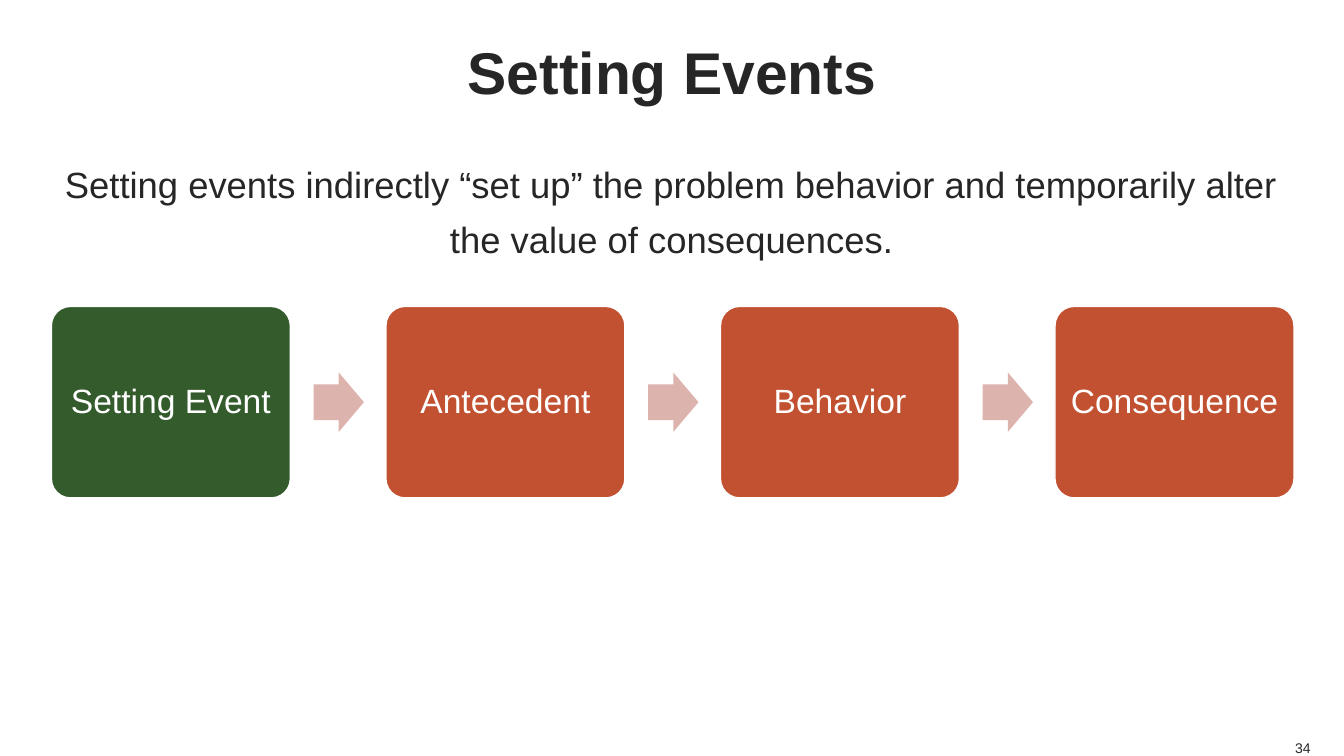
from dataclasses import dataclass

from pptx import Presentation
from pptx.dml.color import RGBColor
from pptx.enum.shapes import MSO_SHAPE
from pptx.enum.text import MSO_ANCHOR, PP_ALIGN
from pptx.util import Inches, Pt

ROUNDED = MSO_SHAPE.ROUNDED_RECTANGLE
ARROW = MSO_SHAPE.RIGHT_ARROW
TOP, MIDDLE, BOTTOM = MSO_ANCHOR.TOP, MSO_ANCHOR.MIDDLE, MSO_ANCHOR.BOTTOM
CENTER, RIGHT = PP_ALIGN.CENTER, PP_ALIGN.RIGHT

FONT = "Arial"
INK, WHITE = "262626", "FFFFFF"
GREEN, RUST, ROSE = "335B2B", "C25131", "DDB3AE"

# Page and step grid, in inches
PAGE_WIDTH, PAGE_HEIGHT = 13.33, 7.5
MARGIN = 0.5
CONTENT_WIDTH = PAGE_WIDTH - 2 * MARGIN
STEP_LEFT, STEP_TOP = 0.51, 3.04
STEP_WIDTH, STEP_HEIGHT = 2.37, 1.9
COLUMN = STEP_WIDTH * 1.4
ARROW_OFFSET = 2.6
ARROW_WIDTH, ARROW_HEIGHT = 0.5, 0.59


@dataclass(frozen=True)
class Area:
    left: float
    top: float
    width: float
    height: float

    def lengths(self) -> list:
        return [Inches(n) for n in (self.left, self.top, self.width, self.height)]


@dataclass(frozen=True)
class Step:
    label: str
    fill: str


STEPS = [
    Step("Setting Event", GREEN),
    Step("Antecedent", RUST),
    Step("Behavior", RUST),
    Step("Consequence", RUST),
]


def color(value: str) -> RGBColor:
    return RGBColor.from_string(value)


def write(box, text: str, *, size: float, ink: str = INK, bold: bool = False,
          align=CENTER, anchor=MIDDLE, spacing: float = 1.0,
          inset: float = 0, wrap: bool = True) -> None:
    frame = box.text_frame
    frame.word_wrap = wrap
    frame.vertical_anchor = anchor
    frame.margin_left = frame.margin_right = Inches(inset)
    frame.margin_top = frame.margin_bottom = Inches(inset)
    para = frame.paragraphs[0]
    para.alignment = align
    para.line_spacing = spacing
    span = para.add_run()
    span.text = text
    span.font.name = FONT
    span.font.size = Pt(size)
    span.font.bold = bold
    span.font.color.rgb = color(ink)


def add_text(page, area: Area, text: str, **style) -> None:
    write(page.shapes.add_textbox(*area.lengths()), text, **style)


def add_filled(page, preset, area: Area, fill: str, adjustments: list[float]):
    shape = page.shapes.add_shape(preset, *area.lengths())
    shape.shadow.inherit = False
    shape.fill.solid()
    shape.fill.fore_color.rgb = color(fill)
    shape.line.fill.background()
    for index, value in enumerate(adjustments):
        shape.adjustments[index] = value
    return shape


def add_step(page, index: int, step: Step) -> None:
    left = STEP_LEFT + index * COLUMN
    area = Area(left, STEP_TOP, STEP_WIDTH, STEP_HEIGHT)
    box = add_filled(page, ROUNDED, area, step.fill, [0.1])
    box.line.color.rgb = color(WHITE)
    box.line.width = Pt(1)
    write(box, step.label, size=24, ink=WHITE, spacing=0.9, inset=0.1)

    # Arrow to the next step
    if index < len(STEPS) - 1:
        top = STEP_TOP + (STEP_HEIGHT - ARROW_HEIGHT) / 2
        area = Area(left + ARROW_OFFSET, top, ARROW_WIDTH, ARROW_HEIGHT)
        add_filled(page, ARROW, area, ROSE, [0.6, 0.5])


def main() -> None:
    deck = Presentation()
    deck.slide_width, deck.slide_height = Inches(PAGE_WIDTH), Inches(PAGE_HEIGHT)
    page = deck.slides.add_slide(deck.slide_layouts[6])

    # Title and definition
    add_text(page, Area(MARGIN, 0, CONTENT_WIDTH, 1.4), "Setting Events",
             size=42, bold=True)
    add_text(page, Area(MARGIN, 1.5, CONTENT_WIDTH, 1.4),
             "Setting events indirectly “set up” the problem behavior and "
             "temporarily alter the value of consequences.",
             size=26, anchor=TOP, spacing=1.25)

    # Chain of events
    for index, step in enumerate(STEPS):
        add_step(page, index, step)

    # Page number
    add_text(page, Area(PAGE_WIDTH - MARGIN, 7.33, 0.17, 0.17), "34",
             size=10, align=RIGHT, anchor=BOTTOM, wrap=False)

    deck.save("out.pptx")


if __name__ == "__main__":
    main()
